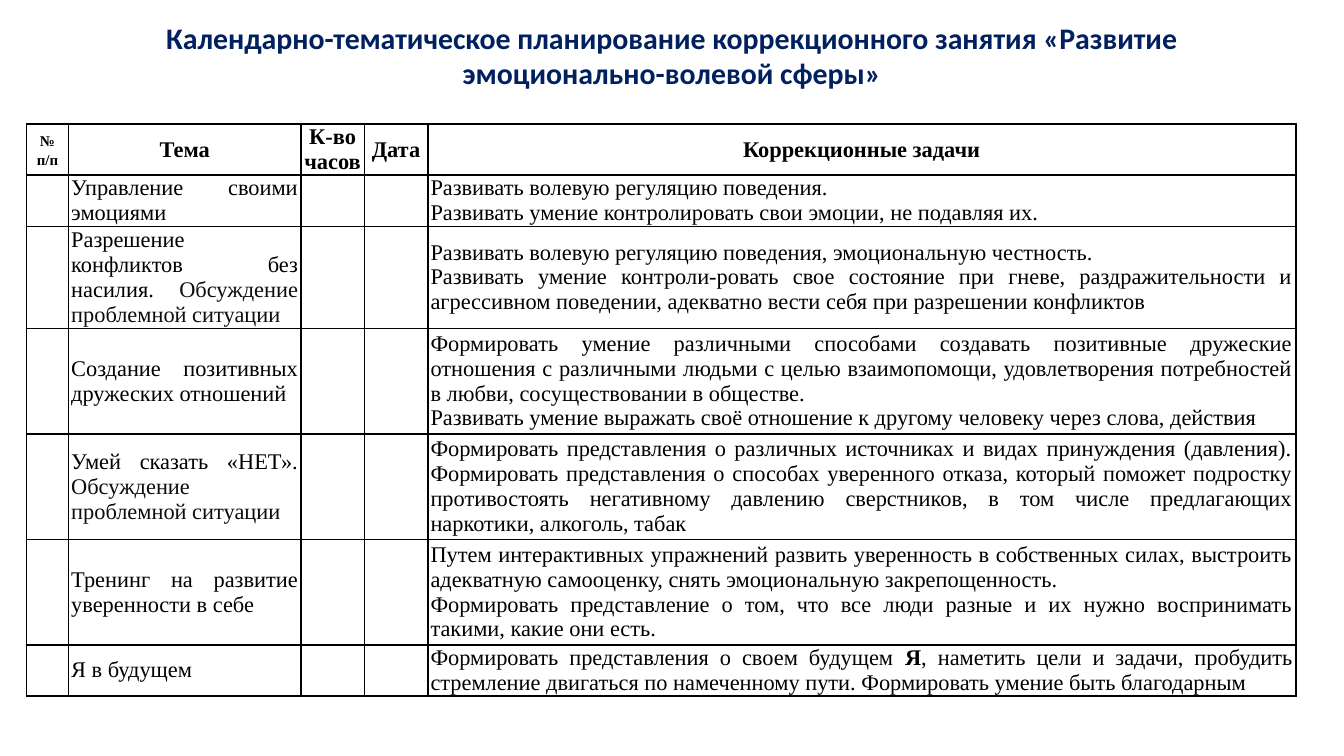
from dataclasses import dataclass
from lxml.etree import SubElement
from pptx import Presentation
from pptx.dml.color import RGBColor
from pptx.enum.text import MSO_ANCHOR as Anchor, MSO_AUTO_SIZE as AutoSize, PP_ALIGN as Align
from pptx.oxml.ns import qn
from pptx.util import Pt

NAVY = RGBColor(0x00, 0x20, 0x60)
BLACK = RGBColor(0x00, 0x00, 0x00)
DARK = RGBColor(0x0D, 0x0D, 0x0D)

TITLE = "Календарно-тематическое планирование коррекционного занятия «Развитие эмоционально-волевой сферы»"
HEADERS = ["№\nп/п", "Тема", "К-во\nчасов", "Дата", "Коррекционные задачи"]
COLUMN_WIDTHS = [22.5, 124.5, 34, 34, 465]
ROW_HEIGHTS = [27.4, 27.4, 54.7, 56.5, 56.5, 56.5, 27.4]


@dataclass
class Piece:
    text: str
    color: RGBColor = BLACK
    bold: bool = False


DISCUSSION = Piece("Обсуждение проблемной ситуации", color=DARK)
TOPICS = [
    (
        ["Управление своими эмоциями"],
        ["Развивать волевую регуляцию поведения.",
         "Развивать умение контролировать свои эмоции, не подавляя их."],
    ),
    (
        [[Piece("Разрешение конфликтов без насилия. "), DISCUSSION]],
        ["Развивать волевую регуляцию поведения, эмоциональную честность.",
         "Развивать умение контроли-ровать свое состояние при гневе, раздражительности и "
         "агрессивном поведении, адекватно вести себя при разрешении конфликтов"],
    ),
    (
        ["Создание позитивных дружеских отношений"],
        ["Формировать умение различными способами создавать позитивные дружеские отношения "
         "с различными людьми с целью взаимопомощи, удовлетворения потребностей в любви, "
         "сосуществовании в обществе.",
         "Развивать умение выражать своё отношение к другому человеку через слова, действия"],
    ),
    (
        [[Piece("Умей сказать «НЕТ». "), DISCUSSION]],
        ["Формировать представления о различных источниках и видах принуждения (давления). "
         "Формировать представления о способах уверенного отказа, который поможет подростку "
         "противостоять негативному давлению сверстников, в том числе предлагающих "
         "наркотики, алкоголь, табак"],
    ),
    (
        ["Тренинг на развитие уверенности в себе"],
        ["Путем интерактивных упражнений развить уверенность в собственных силах, выстроить "
         "адекватную самооценку, снять эмоциональную закрепощенность.",
         "Формировать представление о том, что все люди разные и их нужно воспринимать "
         "такими, какие они есть."],
    ),
    (
        ["Я в будущем"],
        [[Piece("Формировать представления о своем будущем "), Piece("Я", bold=True),
          Piece(", наметить цели и задачи, пробудить стремление двигаться по намеченному пути. "
                "Формировать умение быть благодарным")]],
    ),
]


class SlideBuilder:
    title_font = "Calibri"
    table_font = "Times New Roman"
    text_size = 12
    inset = Pt(1.5)
    border_width = Pt(1)

    def __init__(self, slide):
        self.slide = slide

    def format_run(self, run, font_name, size, color, bold):
        font = run.font
        font.name, font.size, font.bold = font_name, Pt(size), bold
        font.color.rgb = color

    def title(self, text, left, top, width, height):
        shape = self.slide.shapes.title
        shape.left, shape.top, shape.width, shape.height = map(Pt, (left, top, width, height))
        frame = shape.text_frame
        frame.text = text
        frame.word_wrap = True
        frame.auto_size = AutoSize.NONE
        frame.vertical_anchor = Anchor.MIDDLE
        paragraph = frame.paragraphs[0]
        paragraph.alignment = Align.CENTER
        self.format_run(paragraph.runs[0], self.title_font, 16, NAVY, True)

    def table(self, left, top, widths, heights):
        frame = self.slide.shapes.add_table(
            len(heights), len(widths), Pt(left), Pt(top), Pt(sum(widths)), Pt(sum(heights)))
        table = frame.table
        table.first_row = table.horz_banding = False
        for column, width in zip(table.columns, widths):
            column.width = Pt(width)
        for row, height in zip(table.rows, heights):
            row.height = Pt(height)
        for cell in table.iter_cells():
            cell.margin_left = cell.margin_right = self.inset
            cell.margin_top = cell.margin_bottom = 0
            cell.vertical_anchor = Anchor.MIDDLE
            self.borders(cell)
            cell.fill.background()
        return table

    def borders(self, cell):
        properties = cell._tc.get_or_add_tcPr()
        for side in ("a:lnL", "a:lnR", "a:lnT", "a:lnB"):
            line = SubElement(properties, qn(side), w=str(self.border_width))
            fill = SubElement(line, qn("a:solidFill"))
            SubElement(fill, qn("a:srgbClr"), val=str(BLACK))

    def header(self, cell, text, size=text_size, spacing=1.0):
        cell.text_frame.text = text
        for paragraph in cell.text_frame.paragraphs:
            paragraph.alignment = Align.CENTER
            paragraph.line_spacing = spacing
            self.format_run(paragraph.runs[0], self.table_font, size, BLACK, True)

    def body(self, cell, paragraphs):
        frame = cell.text_frame
        for index, content in enumerate(paragraphs):
            paragraph = frame.add_paragraph() if index else frame.paragraphs[0]
            paragraph.alignment = Align.JUSTIFY
            pieces = [Piece(content)] if isinstance(content, str) else content
            for piece in pieces:
                run = paragraph.add_run()
                run.text = piece.text
                self.format_run(run, self.table_font, self.text_size, piece.color, piece.bold)


def main():
    presentation = Presentation()
    presentation.slide_width, presentation.slide_height = Pt(720), Pt(405)
    builder = SlideBuilder(presentation.slides.add_slide(presentation.slide_layouts[5]))
    builder.title(TITLE, 36, -24.5, 648, 108)
    table = builder.table(14.2, 66.5, COLUMN_WIDTHS, ROW_HEIGHTS)
    builder.header(table.cell(0, 0), HEADERS[0], size=8, spacing=1.15)
    for column, text in enumerate(HEADERS[1:], 1):
        builder.header(table.cell(0, column), text)
    for row, (topic, tasks) in enumerate(TOPICS, 1):
        builder.body(table.cell(row, 1), topic)
        builder.body(table.cell(row, 4), tasks)
    presentation.save("out.pptx")


if __name__ == "__main__":
    main()
